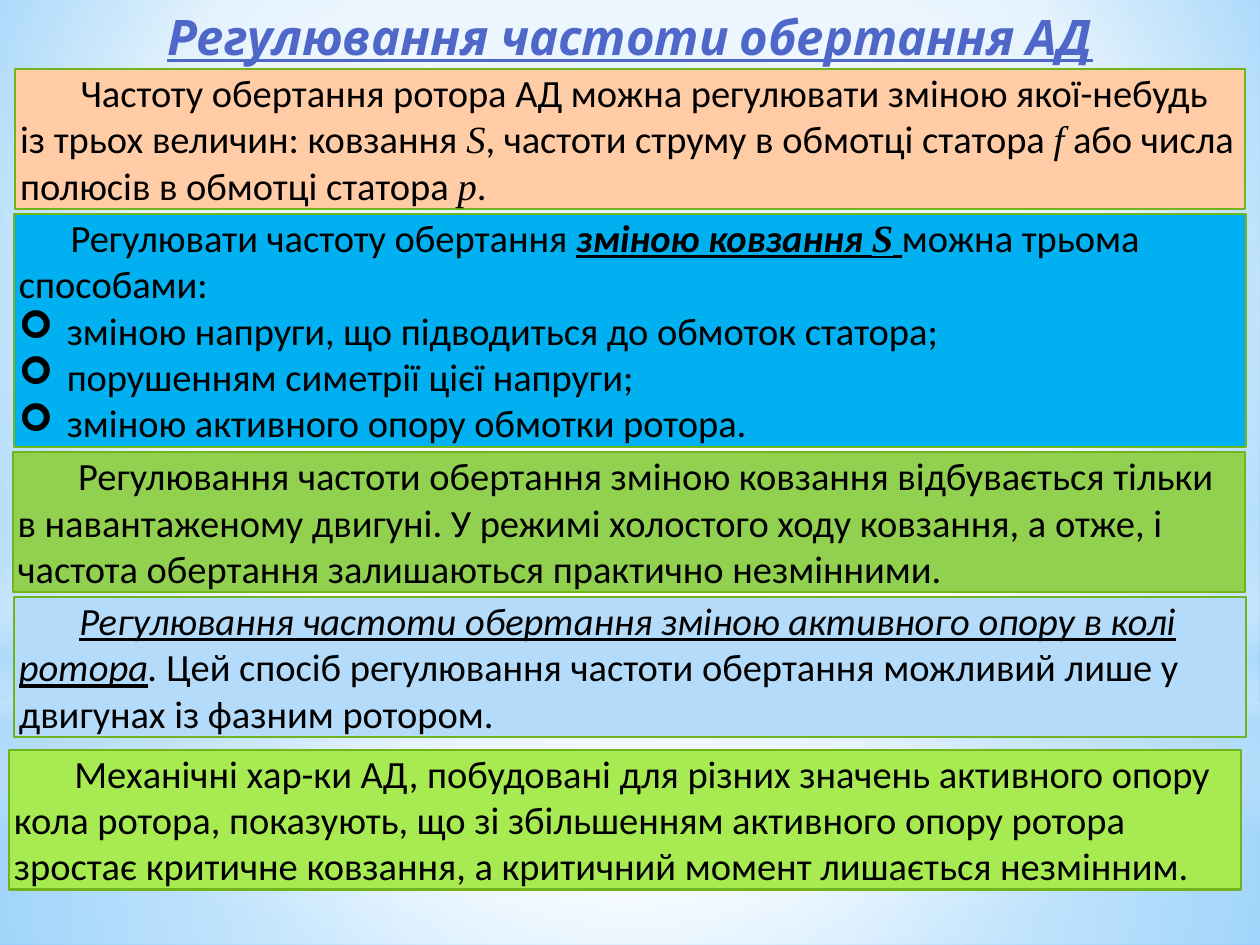
from lxml import etree
from pptx import Presentation
from pptx.dml.color import RGBColor
from pptx.enum.shapes import MSO_SHAPE
from pptx.enum.text import MSO_ANCHOR, MSO_AUTO_SIZE, PP_ALIGN
from pptx.oxml.ns import qn
from pptx.util import Inches, Pt

RECTANGLE, OVAL = MSO_SHAPE.RECTANGLE, MSO_SHAPE.OVAL
LEFT, CENTER = PP_ALIGN.LEFT, PP_ALIGN.CENTER
TOP = MSO_ANCHOR.TOP
GROW = MSO_AUTO_SIZE.SHAPE_TO_FIT_TEXT

COLUMNS, ROWS = 100, 75
SLIDE_WIDTH, SLIDE_HEIGHT = Inches(10), Inches(7.5)
BULLET_INDENT = 0.38
WHITE, PALE_BLUE, BORDER = "FFFFFF", "B4DCFA", "72B41D"
MIDDLE = (50, 50, 50, 50)
SYMBOL = {"font": "Times New Roman", "italic": True}
STRESSED = {"bold": True, "italic": True, "underline": True}


def color(value):
    return RGBColor.from_string(value)


def place(box):
    """Turn grid columns and rows into slide lengths."""
    left, top, width, height = box
    column, row = SLIDE_WIDTH / COLUMNS, SLIDE_HEIGHT / ROWS
    return [round(length) for length in
            (left * column, top * row, width * column, height * row)]


def paint_gradient(fill, holder, stops, center=None):
    """Fill with (position, colour, opacity) stops: round a centre, or downwards."""
    fill.solid()
    gradient = etree.Element(qn("a:gradFill"), rotWithShape="1")
    stop_list = etree.SubElement(gradient, qn("a:gsLst"))
    for position, value, opacity in stops:
        stop = etree.SubElement(stop_list, qn("a:gs"), pos=str(position * 1000))
        tint = etree.SubElement(stop, qn("a:srgbClr"), val=value)
        if opacity < 100:
            etree.SubElement(tint, qn("a:alpha"), val=str(opacity * 1000))
    if center:
        circle = etree.SubElement(gradient, qn("a:path"), path="circle")
        sides = {side: str(share * 1000) for side, share in zip("ltrb", center)}
        etree.SubElement(circle, qn("a:fillToRect"), **sides)
    else:
        etree.SubElement(gradient, qn("a:lin"), ang="5400000", scaled="0")
    holder.replace(holder.find(qn("a:solidFill")), gradient)


def add_glow(slide, kind, box, stops, center=None):
    shape = slide.shapes.add_shape(kind, *place(box))
    shape.shadow.inherit = False
    shape.line.fill.background()
    paint_gradient(shape.fill, shape.element.spPr, stops, center)


def add_background(slide):
    fill = slide.background.fill
    fill.solid()
    holder = next(slide.element.iter(qn("p:bgPr")))
    paint_gradient(fill, holder,
                   [(0, "9ED5FF", 100), (60, WHITE, 100), (100, "5BB9FF", 100)],
                   (20, 10, 20, 60))
    add_glow(slide, RECTANGLE, (0, 55.8, 100, 19.2),
             [(0, WHITE, 91), (37, WHITE, 76), (100, PALE_BLUE, 79)], MIDDLE)
    add_glow(slide, RECTANGLE, (0, 0, 100, 55.8),
             [(0, WHITE, 89), (48, WHITE, 62), (100, PALE_BLUE, 79)], MIDDLE)
    add_glow(slide, RECTANGLE, (0, 41.2, 100, 25),
             [(0, WHITE, 0), (29, WHITE, 30), (45, PALE_BLUE, 40),
              (55, WHITE, 26), (65, PALE_BLUE, 60), (100, WHITE, 0)])
    add_glow(slide, OVAL, (0, 17.5, 100, 55.8),
             [(0, WHITE, 100), (56, WHITE, 0)], MIDDLE)


def add_text(paragraph, text, font="Calibri", size=22, ink="000000",
             bold=False, italic=False, underline=False):
    run = paragraph.add_run()
    run.text = text
    run.font.name, run.font.size = font, Pt(size)
    run.font.bold, run.font.italic, run.font.underline = bold, italic, underline
    run.font.color.rgb = color(ink)


def set_indent(paragraph, first_line, margin=0, bullet=None):
    properties = paragraph._p.get_or_add_pPr()
    properties.set("marL", str(Inches(margin)))
    properties.set("indent", str(Inches(first_line)))
    if bullet:
        etree.SubElement(properties, qn("a:buFont"), typeface="Wingdings")
        etree.SubElement(properties, qn("a:buChar"), char=bullet)


def prepare_frame(shape, side, edge):
    frame = shape.text_frame
    frame.word_wrap, frame.auto_size, frame.vertical_anchor = True, GROW, TOP
    frame.margin_left = frame.margin_right = Inches(side)
    frame.margin_top = frame.margin_bottom = Inches(edge)
    return frame


def add_title(slide, box, text):
    frame = prepare_frame(slide.shapes.add_textbox(*place(box)), 0, 0.05)
    paragraph = frame.paragraphs[0]
    paragraph.alignment = CENTER
    add_text(paragraph, text, font="Cabin", size=28, ink="4E67C8", **STRESSED)


def add_panel(slide, box, background, runs, bullets=(), first_line=0.48):
    shape = slide.shapes.add_shape(RECTANGLE, *place(box))
    shape.shadow.inherit = False
    shape.fill.solid()
    shape.fill.fore_color.rgb = color(background)
    shape.line.color.rgb = color(BORDER)
    shape.line.width = Pt(1.25)
    frame = prepare_frame(shape, 0.04, 0)
    paragraph = frame.paragraphs[0]
    paragraph.alignment = LEFT
    set_indent(paragraph, first_line)
    for text, style in runs:
        add_text(paragraph, text, **style)
    for text in bullets:
        paragraph = frame.add_paragraph()
        paragraph.alignment = LEFT
        set_indent(paragraph, -BULLET_INDENT, BULLET_INDENT, "➢")
        add_text(paragraph, text)


def main():
    presentation = Presentation()
    presentation.slide_width, presentation.slide_height = SLIDE_WIDTH, SLIDE_HEIGHT
    slide = presentation.slides.add_slide(presentation.slide_layouts[6])
    add_background(slide)
    add_title(slide, (1.2, 0, 97.6, 5.7), "Регулювання частоти обертання АД")
    add_panel(slide, (1.2, 5.5, 97.6, 11.1), "FFCCA6", [
        ("Частоту обертання ротора АД можна регулювати зміною якої-небудь "
         "із трьох величин: ковзання ", {}),
        ("S", SYMBOL),
        (", частоти струму в обмотці статора ", {}),
        ("f", SYMBOL),
        (" або числа полюсів в обмотці статора ", {}),
        ("р", SYMBOL),
        (".", {}),
    ])
    add_panel(slide, (1.1, 17, 97.8, 18.5), "00B0F0", [
        ("Регулювати частоту обертання ", {}),
        ("зміною ковзання ", STRESSED),
        ("S", SYMBOL | STRESSED),
        (" ", STRESSED),
        ("можна трьома способами:", {}),
    ], bullets=[
        "зміною напруги, що підводиться до обмоток статора;",
        "порушенням симетрії цієї напруги;",
        "зміною активного опору обмотки ротора.",
    ], first_line=0.41)
    add_panel(slide, (1, 35.9, 97.8, 11.1), "92D050", [
        ("Регулювання частоти обертання зміною ковзання відбувається тільки "
         "в навантаженому двигуні. У режимі холостого ходу ковзання, а отже, "
         "і частота обертання залишаються практично незмінними.", {}),
    ])
    add_panel(slide, (1.1, 47.4, 97.8, 11.1), PALE_BLUE, [
        ("Регулювання частоти обертання зміною активного опору в колі ротора",
         {"italic": True, "underline": True}),
        (".", {"italic": True}),
        (" Цей спосіб регулювання частоти обертання можливий лише у двигунах "
         "із фазним ротором.", {}),
    ])
    add_panel(slide, (0.7, 59.5, 97.8, 11.1), "A7EA52", [
        ("Механічні хар-ки АД, побудовані для різних значень активного опору "
         "кола ротора, показують, що зі збільшенням активного опору ротора "
         "зростає критичне ковзання, а критичний момент лишається незмінним.", {}),
    ])
    presentation.save("out.pptx")


if __name__ == "__main__":
    main()
